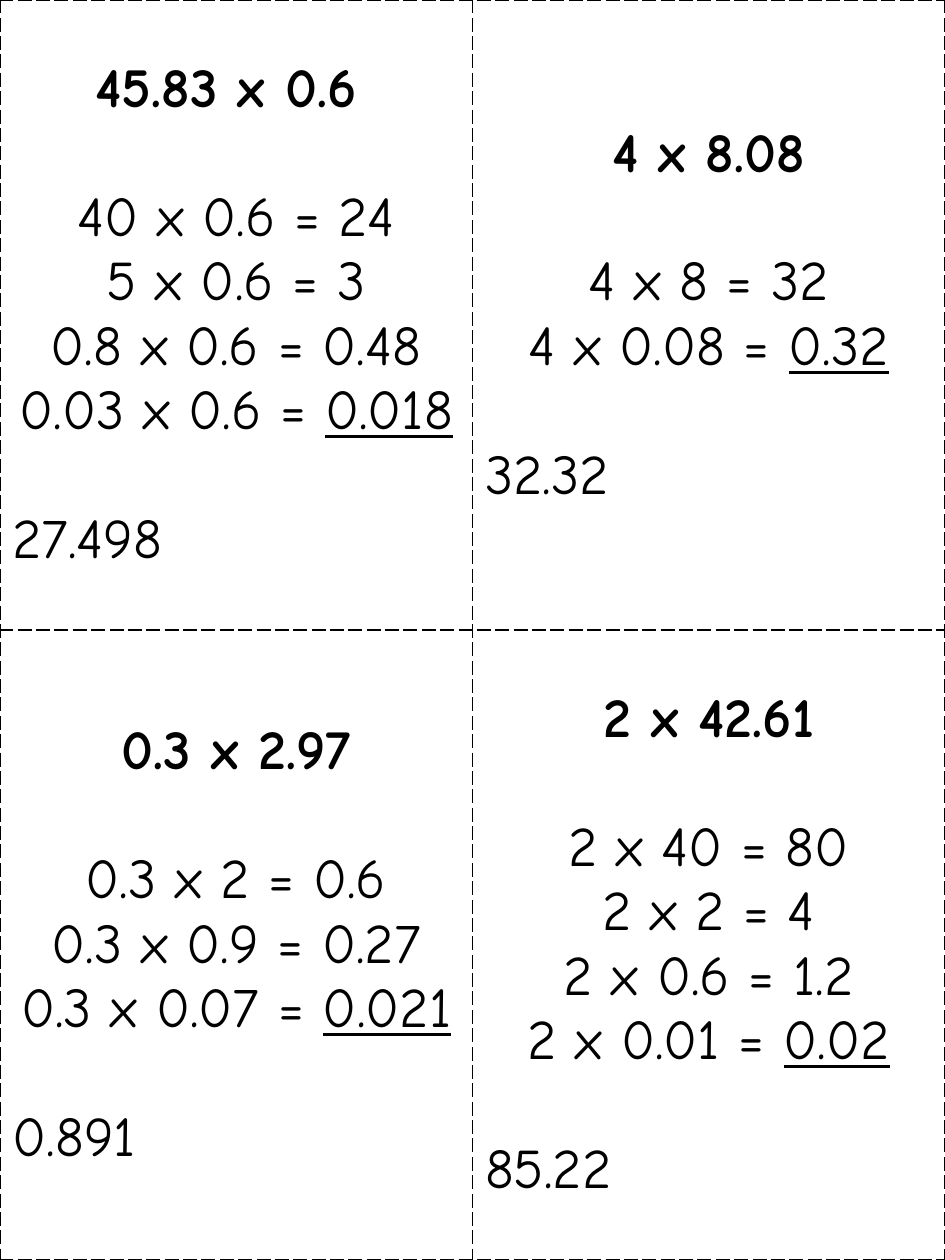
from dataclasses import dataclass
from lxml import etree
from pptx import Presentation
from pptx.dml.color import RGBColor as RGB
from pptx.enum.text import MSO_ANCHOR as Anchor, PP_ALIGN as Align
from pptx.oxml.ns import qn
from pptx.util import Inches, Pt


@dataclass
class Theme:
    font: str = "Comic Neue"
    ink: str = "000000"
    size: float = 32
    gap: float = 36.8  # one line of text
    rule: float = 1


theme = Theme()

# Each card: sum, partial products, answer
cards = [
    ("45.83 x 0.6 ",
     ["40 x 0.6 = 24", "5 x 0.6 = 3", "0.8 x 0.6 = 0.48", "0.03 x 0.6 = 0.018"],
     "27.498"),
    ("4 x 8.08", ["4 x 8 = 32", "4 x 0.08 = 0.32"], "32.32"),
    ("0.3 x 2.97",
     ["0.3 x 2 = 0.6", "0.3 x 0.9 = 0.27", "0.3 x 0.07 = 0.021"],
     "0.891"),
    ("2 x 42.61",
     ["2 x 40 = 80", "2 x 2 = 4", "2 x 0.6 = 1.2", "2 x 0.01 = 0.02"],
     "85.22"),
]


def add_run(para, text, bold=False, line=False):
    run = para.add_run()
    run.text = text
    font = run.font
    font.name, font.size = theme.font, Pt(theme.size)
    font.bold, font.underline = bold, line
    font.color.rgb = RGB.from_string(theme.ink)


def add_edges(cell):
    props = cell._tc.get_or_add_tcPr()
    for spot, side in enumerate(("a:lnL", "a:lnR", "a:lnT", "a:lnB")):
        edge = etree.Element(qn(side), w=str(Pt(theme.rule)))
        fill = etree.SubElement(edge, qn("a:solidFill"))
        etree.SubElement(fill, qn("a:srgbClr"), val=theme.ink)
        etree.SubElement(edge, qn("a:prstDash"), val="lgDash")
        props.insert(spot, edge)


# Page
deck = Presentation()
deck.slide_width, deck.slide_height = Inches(7.5), Inches(10)
slide = deck.slides.add_slide(deck.slide_layouts[6])

# Grid of four cards
grid = slide.shapes.add_table(2, 2, 0, 0, Inches(7.5), Inches(10)).table
grid.first_row = grid.horz_banding = False

for cell, (title, steps, answer) in zip(grid.iter_cells(), cards):
    cell.fill.background()
    add_edges(cell)
    cell.vertical_anchor = Anchor.MIDDLE
    cell.margin_left = cell.margin_right = Inches(0.1)
    cell.margin_top = cell.margin_bottom = Inches(0.05)
    frame = cell.text_frame

    # Sum
    para = frame.paragraphs[0]
    para.alignment = Align.CENTER
    para.space_after = Pt(theme.gap)
    add_run(para, title, bold=True)

    # Partial products, the last result underlined
    for step in steps[:-1]:
        para = frame.add_paragraph()
        para.alignment = Align.CENTER
        add_run(para, step)
    para = frame.add_paragraph()
    para.alignment = Align.CENTER
    left, right = steps[-1].split("= ")
    add_run(para, left + "= ")
    add_run(para, right, line=True)

    # Answer
    para = frame.add_paragraph()
    para.alignment = Align.LEFT
    para.space_before = Pt(theme.gap)
    add_run(para, answer)

deck.save("out.pptx")
